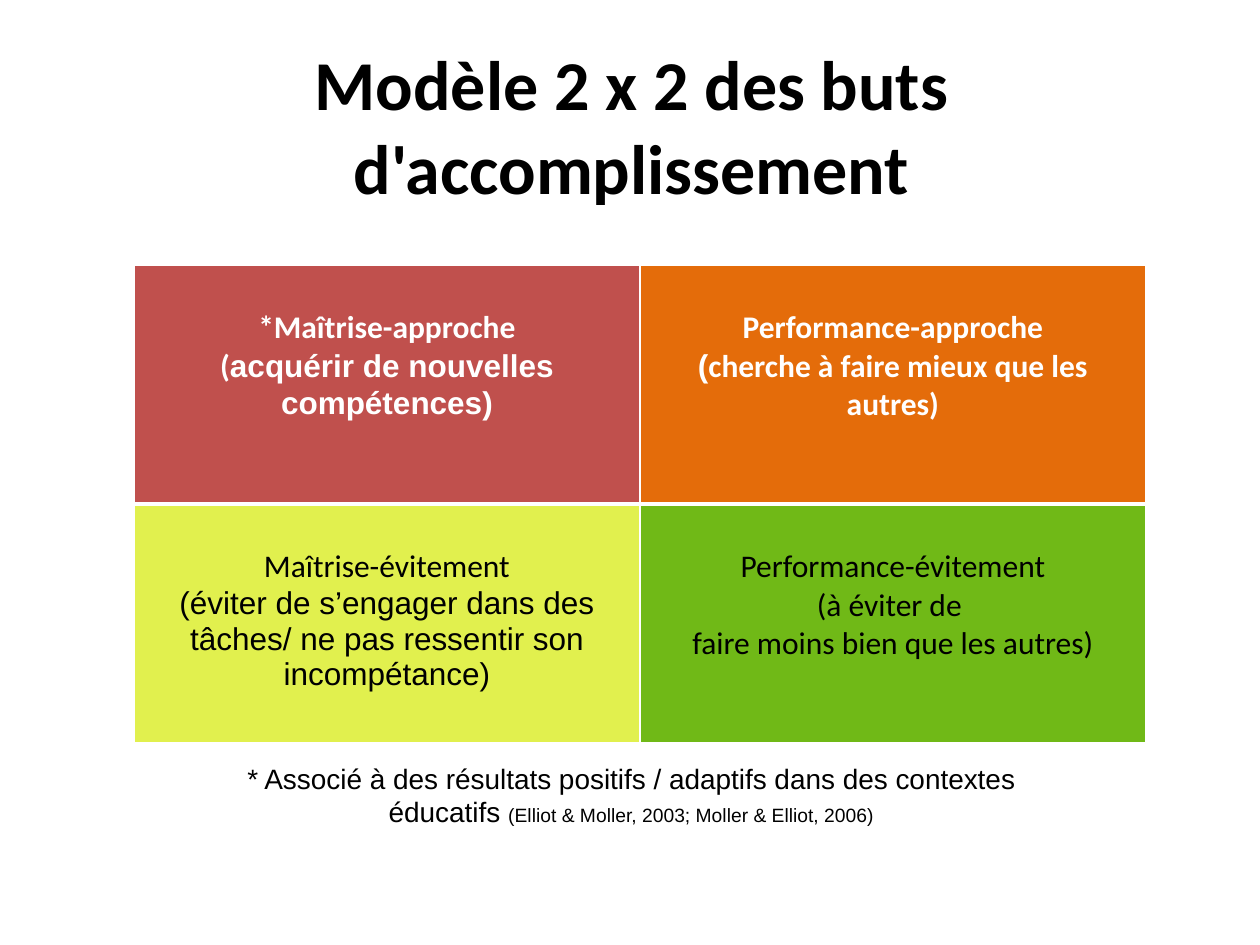
from lxml import etree
from pptx import Presentation
from pptx import util as u
from pptx.dml.color import RGBColor
from pptx.enum import text
from pptx.oxml.ns import qn

PX = 914400 / 126  # EMU per px

BLACK = RGBColor(0x00, 0x00, 0x00)
WHITE = RGBColor(0xFF, 0xFF, 0xFF)
RED = RGBColor(0xC0, 0x50, 0x4D)
ORANGE = RGBColor(0xE4, 0x6C, 0x0A)
YELLOW = RGBColor(0xE1, 0xF0, 0x4E)
GREEN = RGBColor(0x70, 0xB9, 0x17)

SANS = "Calibri"
ARIAL = "Arial"

# Each cell: fill, text colour, bold, paragraphs of (text, font) runs
GOALS = [
    [
        (RED, WHITE, True, [
            [("*Maîtrise-approche", SANS)],
            [("(", SANS), ("acquérir de nouvelles compétences)", ARIAL)],
        ]),
        (ORANGE, WHITE, True, [
            [("Performance-approche", SANS)],
            [("(", ARIAL), ("cherche à faire mieux que les autres)", SANS)],
        ]),
    ],
    [
        (YELLOW, BLACK, False, [
            [("Maîtrise-évitement", SANS)],
            [("(éviter de s’engager dans des tâches/ ne pas ressentir son incompétance)", ARIAL)],
        ]),
        (GREEN, BLACK, False, [
            [("Performance-évitement", SANS)],
            [("(à éviter de ", SANS)],
            [("faire moins bien que les autres)", SANS)],
        ]),
    ],
]


def px(length):
    return u.Emu(round(length * PX))


def add_run(para, words, font, size, color, bold=False):
    run = para.add_run()
    run.text = words
    run.font.name = font
    run.font.size = u.Pt(size)
    run.font.bold = bold
    run.font.color.rgb = color


def add_text(page, left, top, width, height, runs, anchor):
    """Add a centred one-paragraph box from (text, font, size, bold) runs."""
    box = page.shapes.add_textbox(px(left), px(top), px(width), px(height))
    frame = box.text_frame
    frame.word_wrap = True
    frame.vertical_anchor = anchor
    para = frame.paragraphs[0]
    para.alignment = text.PP_ALIGN.CENTER
    for words, font, size, bold in runs:
        add_run(para, words, font, size, BLACK, bold)


def set_borders(cell, widths):
    """Draw white cell borders; widths are points by side."""
    properties = cell._tc.get_or_add_tcPr()
    for index, (side, width) in enumerate(widths.items()):
        line = etree.Element(qn(f"a:ln{side}"), w=str(u.Pt(width)))
        fill = etree.SubElement(line, qn("a:solidFill"))
        etree.SubElement(fill, qn("a:srgbClr"), val=str(WHITE))
        properties.insert(index, line)


def fill_cell(cell, fill, color, bold, paragraphs):
    cell.fill.solid()
    cell.fill.fore_color.rgb = fill
    cell.margin_top = px(44)
    frame = cell.text_frame
    for index, runs in enumerate(paragraphs):
        para = frame.add_paragraph() if index else frame.paragraphs[0]
        para.alignment = text.PP_ALIGN.CENTER
        for words, font in runs:
            add_run(para, words, font, 18, color, bold)


def add_goal_table(page, left, top, column_width, row_height):
    rows, columns = len(GOALS), len(GOALS[0])
    table = page.shapes.add_table(
        rows, columns, px(left), px(top),
        px(columns * column_width), px(rows * row_height)).table
    for column in table.columns:
        column.width = px(column_width)
    for r, goals in enumerate(GOALS):
        table.rows[r].height = px(row_height)
        for c, goal in enumerate(goals):
            cell = table.cell(r, c)
            fill_cell(cell, *goal)
            # A thick rule separates the two rows
            set_borders(cell, {"L": 1, "R": 1,
                               "T": 3 if r else 1,
                               "B": 1 if r else 3})


def main():
    deck = Presentation()
    deck.slide_width, deck.slide_height = px(1260), px(945)
    page = deck.slides.add_slide(deck.slide_layouts[6])

    # Title
    add_text(page, 113, 76, 1037, 97,
             [("Modèle 2 x 2 des buts d'accomplissement", SANS, 40, True)],
             text.MSO_ANCHOR.MIDDLE)

    # Two by two goals
    add_goal_table(page, 134, 265, 506, 239)

    # Footnote
    add_text(page, 200, 755, 863, 81,
             [("* Associé à des résultats positifs / adaptifs dans des contextes éducatifs ",
               ARIAL, 16, False),
              ("(Elliot & Moller, 2003; Moller & Elliot, 2006)", ARIAL, 11, False)],
             text.MSO_ANCHOR.TOP)

    deck.save("out.pptx")


if __name__ == "__main__":
    main()
